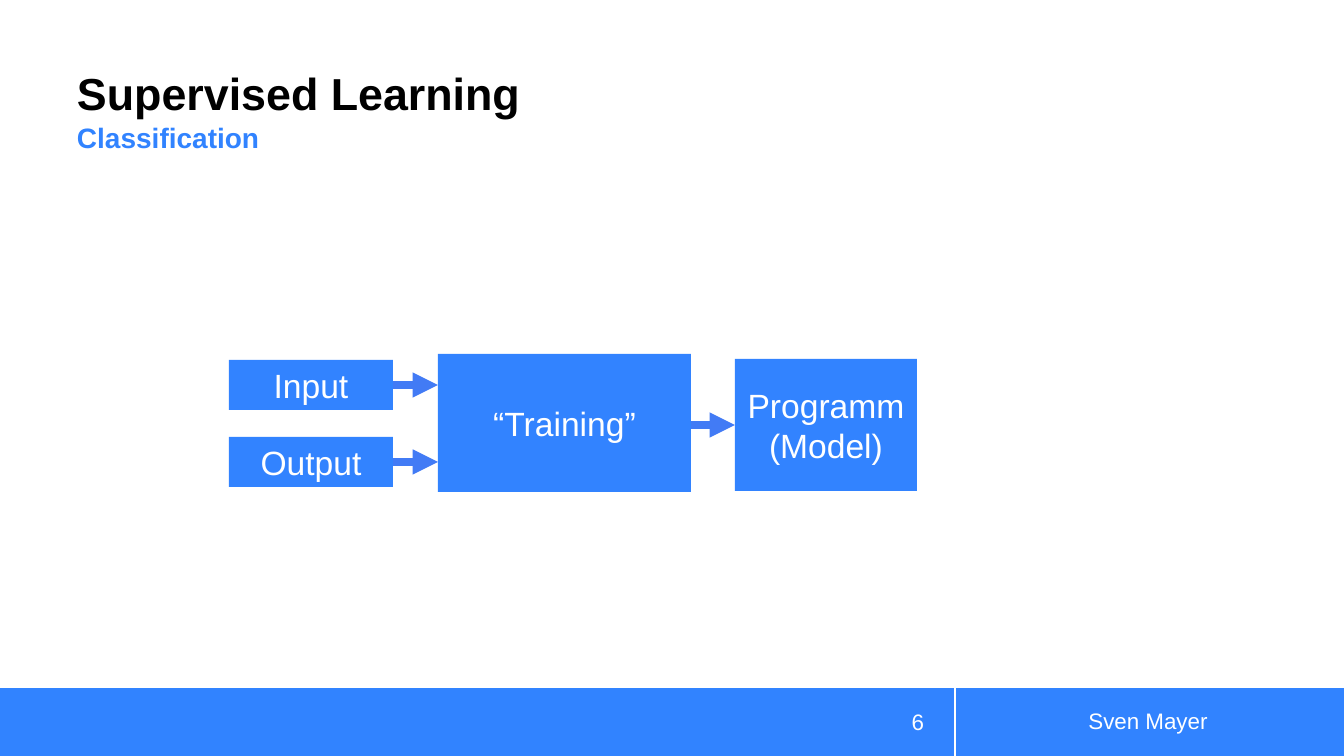
from pptx import Presentation
from pptx.dml.color import RGBColor as Rgb
from pptx.enum.shapes import MSO_CONNECTOR as Line, MSO_SHAPE as Kind
from pptx.enum.text import MSO_ANCHOR as Anchor, MSO_AUTO_SIZE as Auto, PP_ALIGN as Align
from pptx.oxml.ns import qn
from pptx.util import Emu, Pt
from lxml.etree import SubElement as Sub

PX = 914400 / 100.8  # EMU in one px
HUES = {"band": "3183FF", "box": "3283FF", "arrow": "427BF5",
        "white": "FFFFFF", "black": "000000"}


def px(*nums):
    return [Emu(round(n * PX)) for n in nums]


def write(shape, text, size=16, hue="white", bold=False, align=Align.CENTER,
          anchor=Anchor.MIDDLE, pads=(10, 5, 10, 5), lead=1.0, before=0, after=0):
    frame = shape.text_frame
    frame.word_wrap = True
    frame.auto_size = Auto.NONE
    frame.vertical_anchor = anchor
    (frame.margin_left, frame.margin_top,
     frame.margin_right, frame.margin_bottom) = px(*pads)
    frame.text = text
    para = frame.paragraphs[0]
    para.alignment, para.line_spacing = align, lead
    para.space_before, para.space_after = Pt(before), Pt(after)
    font = para.runs[0].font
    font.name, font.size, font.bold = "Arial", Pt(size), bold
    font.color.rgb = Rgb.from_string(HUES[hue])


deck = Presentation()
deck.slide_width, deck.slide_height = px(1344, 756)
slide = deck.slides.add_slide(deck.slide_layouts[1])
shapes = slide.shapes

# Footer bands and diagram boxes
rects = {}
for key, hue, place in [
    ("left", "band", (0, 688, 954, 68)),
    ("right", "band", (956, 688, 388, 68)),
    ("Input", "box", (229, 360, 164, 50)),
    ("Output", "box", (229, 437, 164, 50)),
    ("“Training”", "box", (438, 354, 253, 138)),
    ("Programm (Model)", "box", (735, 359, 182, 132)),
]:
    rect = rects[key] = shapes.add_shape(Kind.RECTANGLE, *px(*place))
    rect.shadow.inherit = False
    rect.fill.solid()
    rect.fill.fore_color.rgb = Rgb.from_string(HUES[hue])
    rect.line.fill.background()
    if hue == "box":
        write(rect, key, size=24)

# Title and subtitle
title, body = shapes.title, slide.placeholders[1]
title.left, title.top, title.width, title.height = px(77, 13, 877, 107)
write(title, "Supervised Learning", size=32, hue="black", bold=True,
      align=Align.LEFT, anchor=Anchor.BOTTOM, pads=(0, 0, 0, 0), lead=0.9)
body.left, body.top, body.width, body.height = px(77, 120, 877, 55)
write(body, "Classification", size=20, hue="band", bold=True, align=Align.LEFT,
      anchor=Anchor.TOP, pads=(0, 4, 0, 0), lead=0.9, before=5, after=6)
props = body.text_frame.paragraphs[0]._p.get_or_add_pPr()
props.set("marL", "0")
props.set("indent", "0")
Sub(props, qn("a:buNone"))

# Footer text
for text, align, place in [
    ("Sven Mayer", Align.CENTER, (969, 701, 358, 40)),
    ("6", Align.RIGHT, (848, 702, 86, 40)),
]:
    write(shapes.add_textbox(*px(*place)), text, align=align)

# Arrows
for start, end, ends in [
    ("Input", None, (393, 385, 438, 385)),
    ("Output", None, (393, 462, 438, 462)),
    (None, "Programm (Model)", (691, 425, 735, 425)),
]:
    arrow = shapes.add_connector(Line.STRAIGHT, *px(*ends))
    if start:
        arrow.begin_connect(rects[start], 3)
    if end:
        arrow.end_connect(rects[end], 1)
    arrow.line.color.rgb = Rgb.from_string(HUES["arrow"])
    arrow.line.width = Pt(6)
    Sub(arrow.line._get_or_add_ln(), qn("a:tailEnd"), type="triangle")
    Sub(arrow._element.spPr, qn("a:effectLst"))

deck.save("out.pptx")
